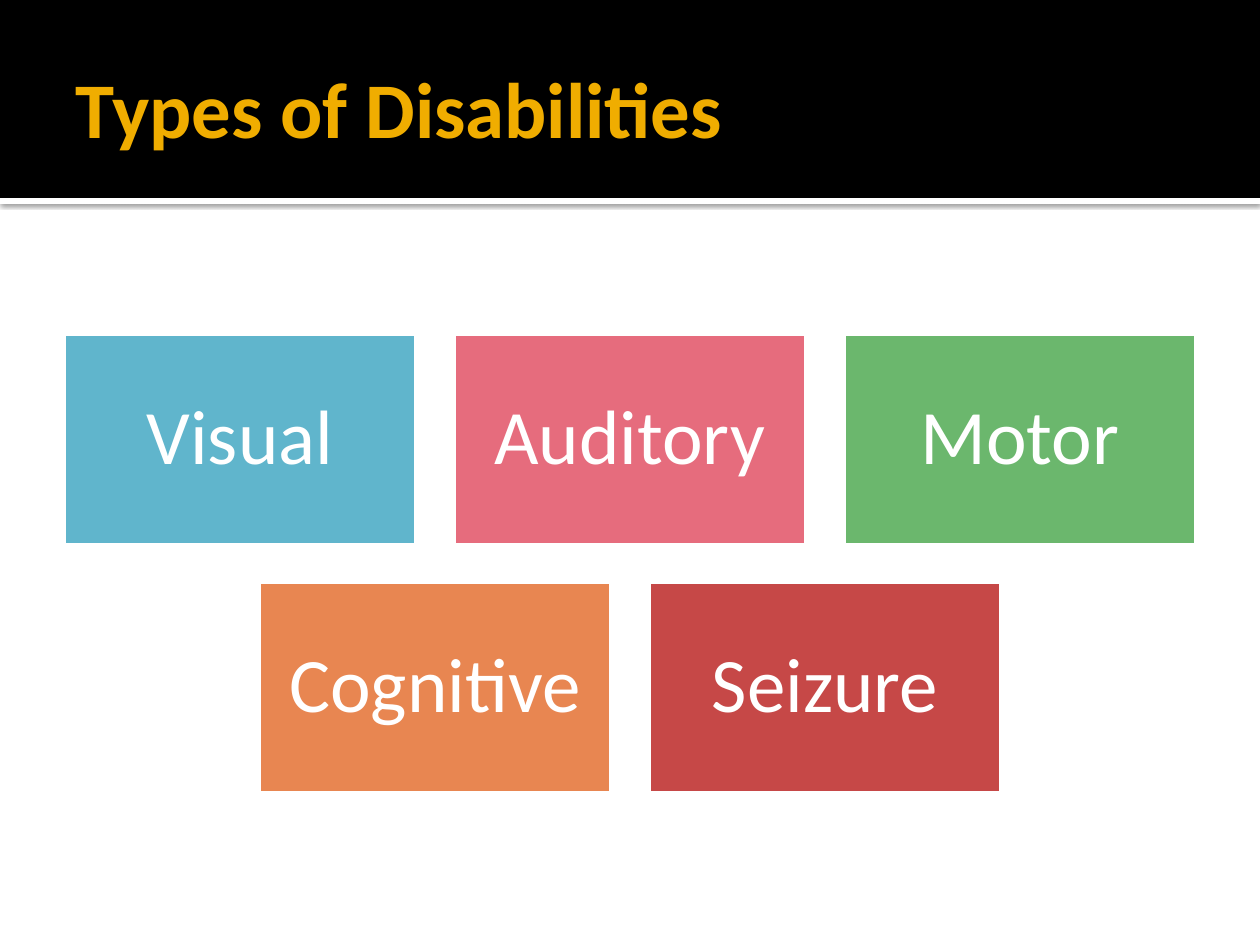
from dataclasses import dataclass

from lxml.etree import SubElement
from pptx import Presentation
from pptx.dml.color import RGBColor
from pptx.enum.shapes import MSO_SHAPE
from pptx.enum.text import MSO_ANCHOR, MSO_AUTO_SIZE, PP_ALIGN
from pptx.oxml.ns import qn
from pptx.util import Inches, Pt

TITLE = "Types of Disabilities"
ROWS = [
    [("Visual", "60B5CC"), ("Auditory", "E66C7D"), ("Motor", "6BB76D")],
    [("Cognitive", "E88651"), ("Seizure", "C64847")],
]


@dataclass(frozen=True)
class Theme:
    font: str = "Calibri"
    title: str = "F0AD00"
    band: str = "000000"
    light: str = "FFFFFF"
    title_size: float = 45
    box_size: float = 44
    outline: float = 3.78


THEME = Theme()
WIDTH, HEIGHT = 1260, 945
BAND_H, RULE_H = 198, 6
BOX_W, BOX_H, GAP, ROWS_TOP = 354, 213, 36, 333


def px(n):
    return Inches(n / 126)


def add_rect(s, x, y, w, h, color):
    sp = s.shapes.add_shape(MSO_SHAPE.RECTANGLE, px(x), px(y), px(w), px(h))
    sp.shadow.inherit = False
    sp.fill.solid()
    sp.fill.fore_color.rgb = RGBColor.from_string(color)
    sp.line.fill.background()
    return sp


def add_drop_shadow(sp):
    effects = sp.element.spPr.find(qn("a:effectLst"))
    shadow = SubElement(effects, qn("a:outerShdw"), blurRad=str(Pt(2.5)),
                        dist=str(Pt(0.8)), dir="5400000", rotWithShape="0")
    color = SubElement(shadow, qn("a:srgbClr"), val=THEME.band)
    SubElement(color, qn("a:alpha"), val="60000")


def set_text(sp, text, size, color, align, margins, bold=False):
    tf = sp.text_frame
    tf.text = text
    tf.word_wrap = True
    tf.auto_size = MSO_AUTO_SIZE.NONE
    tf.vertical_anchor = MSO_ANCHOR.MIDDLE
    tf.margin_left, tf.margin_top, tf.margin_right, tf.margin_bottom = map(Inches, margins)
    p = tf.paragraphs[0]
    p.alignment = align
    font = p.runs[0].font
    font.name, font.size, font.bold = THEME.font, Pt(size), bold
    font.color.rgb = RGBColor.from_string(color)
    return p


def add_header(s):
    add_drop_shadow(add_rect(s, 0, BAND_H, WIDTH, RULE_H, THEME.light))
    add_rect(s, 0, 0, WIDTH, BAND_H, THEME.band)
    title = s.shapes.title
    title.left, title.top, title.width, title.height = map(px, (63, 21, 1134, 173))
    set_text(title, TITLE, THEME.title_size, THEME.title, PP_ALIGN.LEFT,
             (0.1, 0.05, 0.05, 0.05), bold=True)
    s.shapes.element.append(title.element)  # bring the title in front of the band


def add_boxes(s):
    for i, row in enumerate(ROWS):
        row_w = len(row) * (BOX_W + GAP) - GAP
        for j, (label, color) in enumerate(row):
            x = (WIDTH - row_w) // 2 + j * (BOX_W + GAP)
            y = ROWS_TOP + i * (BOX_H + GAP - 1)
            sp = add_rect(s, x, y, BOX_W, BOX_H, color)
            sp.line.color.rgb = RGBColor.from_string(THEME.light)
            sp.line.width = Pt(THEME.outline)
            p = set_text(sp, label, THEME.box_size, THEME.light, PP_ALIGN.CENTER, (0.18,) * 4)
            p.line_spacing = 0.9


def main():
    prs = Presentation()
    prs.slide_width, prs.slide_height = px(WIDTH), px(HEIGHT)
    s = prs.slides.add_slide(prs.slide_layouts[5])
    add_header(s)
    add_boxes(s)
    prs.save("out.pptx")


if __name__ == "__main__":
    main()
